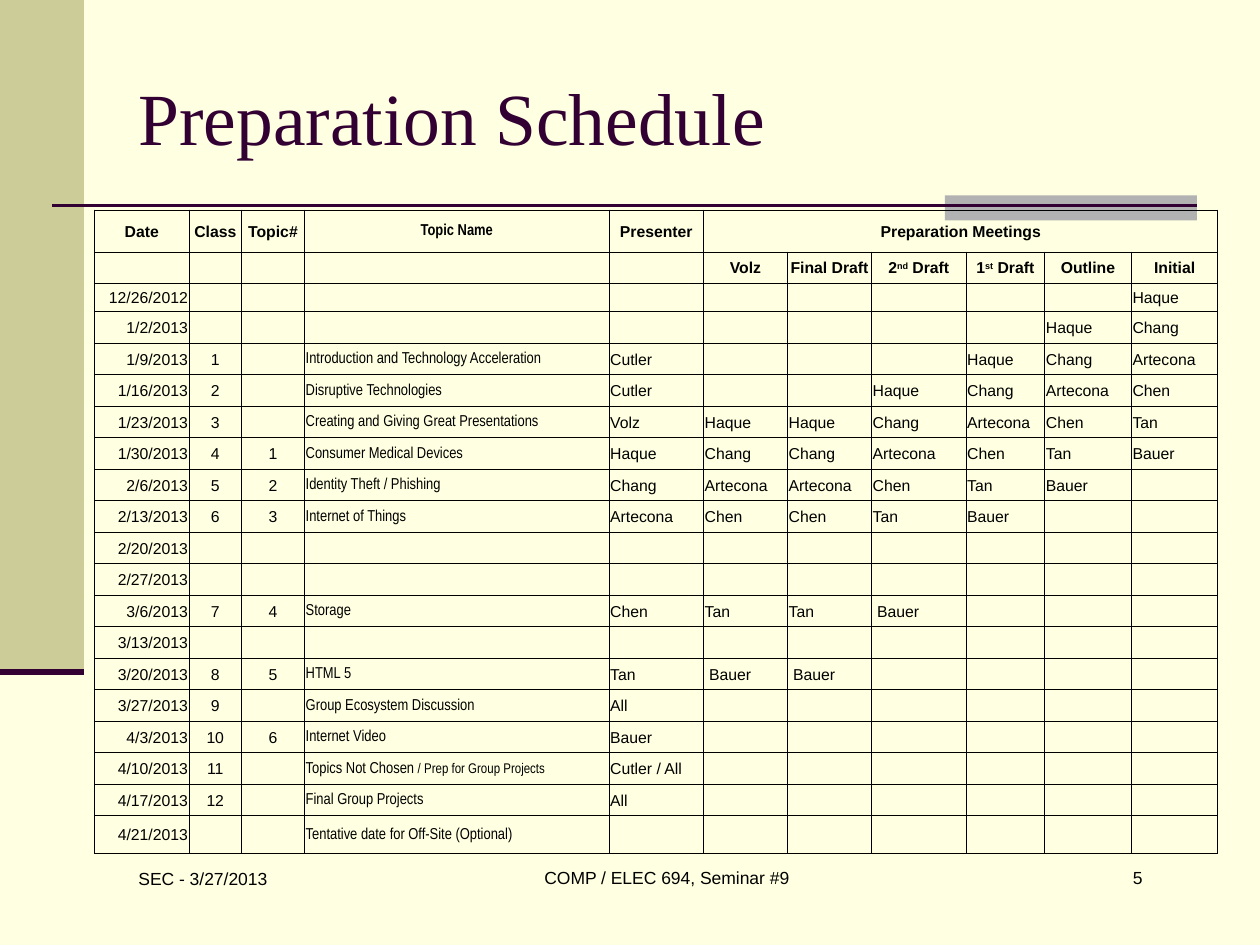
import dataclasses

import pptx
import pptx.dml.color
import pptx.enum.shapes
import pptx.enum.text
import pptx.oxml
import pptx.oxml.ns
import pptx.util

ALIGN = pptx.enum.text.PP_ALIGN
MID = pptx.enum.text.MSO_ANCHOR.MIDDLE
UNIT = 1 / 12  # the slide is a grid of 120 columns by 90 rows


@dataclasses.dataclass(frozen=True)
class Theme:
    page: str = "FFFFE1"
    band: str = "CCCC99"
    block: str = "B2B2B2"
    plum: str = "330033"
    ink: str = "000000"
    serif: str = "Times New Roman"
    sans: str = "Arial"
    slim: str = "Arial Narrow"
    head: float = 42
    foot: float = 10
    body: float = 9
    small: float = 8


T = Theme()

COLS = [9, 5, 6, 29, 9, 8, 8, 9, 7.5, 8.25, 8.25]
ROWS = [4, 3, 2.7] + [3] * 16 + [3.6]
TOPIC = 3   # column set in the narrow face
MEET = 5    # first column of the meetings
SIDES = [ALIGN.RIGHT, ALIGN.CENTER, ALIGN.CENTER] + [ALIGN.LEFT] * 8

# Cells are split by "|"; ^ marks raised text and ~ marks smaller text
HEADS = [
    "Date|Class|Topic#|Topic Name|Presenter|Preparation Meetings",
    "|||||Volz|Final Draft|2^nd^ Draft|1^st^ Draft|Outline|Initial",
]
DATES = [
    "12/26/2012||||||||||Haque",
    "1/2/2013|||||||||Haque|Chang",
    "1/9/2013|1||Introduction and Technology Acceleration|Cutler||||Haque|Chang|Artecona",
    "1/16/2013|2||Disruptive Technologies|Cutler|||Haque|Chang|Artecona|Chen",
    "1/23/2013|3||Creating and Giving Great Presentations|Volz|Haque|Haque|Chang|Artecona|Chen|Tan",
    "1/30/2013|4|1|Consumer Medical Devices|Haque|Chang|Chang|Artecona|Chen|Tan|Bauer",
    "2/6/2013|5|2|Identity Theft / Phishing|Chang|Artecona|Artecona|Chen|Tan|Bauer",
    "2/13/2013|6|3|Internet of Things|Artecona|Chen|Chen|Tan|Bauer",
    "2/20/2013",
    "2/27/2013",
    "3/6/2013|7|4|Storage|Chen|Tan|Tan| Bauer",
    "3/13/2013",
    "3/20/2013|8|5|HTML 5|Tan| Bauer| Bauer",
    "3/27/2013|9||Group Ecosystem Discussion|All",
    "4/3/2013|10|6|Internet Video|Bauer",
    "4/10/2013|11||Topics Not Chosen ~/ Prep for Group Projects|Cutler / All",
    "4/17/2013|12||Final Group Projects|All",
    "4/21/2013|||Tentative date for Off-Site (Optional)",
]


def grid(n):
    return pptx.util.Inches(n * UNIT)


def rgb(code):
    return pptx.dml.color.RGBColor.from_string(code)


def write(para, text, face, size, color, bold=False):
    run = para.add_run()
    run.text = text
    run.font.name = face
    run.font.size = pptx.util.Pt(size)
    run.font.bold = bold
    run.font.color.rgb = rgb(color)
    return run


def block(slide, box, color):
    kind = pptx.enum.shapes.MSO_SHAPE.RECTANGLE
    shape = slide.shapes.add_shape(kind, *map(grid, box))
    shape.shadow.inherit = False
    shape.fill.solid()
    shape.fill.fore_color.rgb = rgb(color)
    shape.line.fill.background()


def rule(slide, left, right, row, width):
    kind = pptx.enum.shapes.MSO_CONNECTOR.STRAIGHT
    line = slide.shapes.add_connector(kind, grid(left), grid(row), grid(right), grid(row))
    line.line.color.rgb = rgb(T.plum)
    line.line.width = pptx.util.Pt(width)
    props = line._element.spPr
    props.append(props.makeelement(pptx.oxml.ns.qn("a:effectLst"), {}))


def frame(slide):
    """Band, block and rules behind the content."""
    block(slide, (0, 0, 8, 64), T.band)
    block(slide, (90, 18.6, 24, 2.4), T.block)
    rule(slide, 5, 114, 19.6, 1.5)
    rule(slide, 0, 8, 64, 3.5)


def title(slide, box, text):
    shape = slide.shapes.title
    shape.left, shape.top, shape.width, shape.height = map(grid, box)
    shape.text_frame.vertical_anchor = MID
    para = shape.text_frame.paragraphs[0]
    para.alignment = ALIGN.LEFT
    write(para, text, T.serif, T.head, T.plum)


def footer(slide, box, text, side):
    area = slide.shapes.add_textbox(*map(grid, box)).text_frame
    area.word_wrap = True
    para = area.paragraphs[0]
    para.alignment = side
    write(para, text, T.sans, T.foot, T.ink)


def border(cell):
    props = cell._tc.get_or_add_tcPr()
    for side in "LRTB":
        props.append(pptx.oxml.parse_xml(
            f'<a:ln{side} {pptx.oxml.ns.nsdecls("a")} w="6350"><a:solidFill>'
            f'<a:srgbClr val="{T.ink}"/></a:solidFill></a:ln{side}>'))


def entry(cell, text, side, face, bold):
    border(cell)
    cell.fill.background()
    cell.vertical_anchor = MID
    cell.margin_left = cell.margin_right = cell.margin_top = pptx.util.Inches(0.01)
    cell.margin_bottom = 0
    para = cell.text_frame.paragraphs[0]
    para.alignment = side
    if not text:  # keeps an empty row from growing
        mark = para._p.makeelement(pptx.oxml.ns.qn("a:endParaRPr"), {"sz": str(T.body * 100)})
        para._p.append(mark)
        return
    main, _, extra = text.partition("~")
    for n, part in enumerate(main.split("^")):
        run = write(para, part, face, T.body, T.ink, bold)
        if n % 2:
            run._r.get_or_add_rPr().set("baseline", "30000")
    if extra:
        write(para, extra, face, T.small, T.ink, bold)


def schedule(slide, left, top):
    """Dates by row, with the meetings under one joined heading."""
    size = (left, top, sum(COLS), sum(ROWS))
    table = slide.shapes.add_table(len(ROWS), len(COLS), *map(grid, size)).table
    table.first_row = table.horz_banding = False
    for col, width in zip(table.columns, COLS):
        col.width = grid(width)
    for row, height in zip(table.rows, ROWS):
        row.height = grid(height)
    for r, line in enumerate(HEADS + DATES):
        texts = line.split("|")
        texts += [""] * (len(COLS) - len(texts))
        head = r < len(HEADS)
        for c, text in enumerate(texts):
            side = ALIGN.CENTER if head else SIDES[c]
            face = T.slim if c == TOPIC else T.sans
            entry(table.cell(r, c), text, side, face, head)
    table.cell(0, MEET).merge(table.cell(0, len(COLS) - 1))


def main():
    deck = pptx.Presentation()
    deck.slide_width, deck.slide_height = grid(120), grid(90)
    slide = deck.slides.add_slide(deck.slide_layouts[5])
    slide.background.fill.solid()
    slide.background.fill.fore_color.rgb = rgb(T.page)
    frame(slide)
    title(slide, (12, 3.6, 102, 15), "Preparation Schedule")
    footer(slide, (12, 82.1, 26, 6), "SEC - 3/27/2013", ALIGN.LEFT)
    footer(slide, (44, 82, 39, 6), "COMP / ELEC 694, Seminar #9", ALIGN.CENTER)
    footer(slide, (89, 82, 21, 6), "5", ALIGN.RIGHT)
    schedule(slide, 9, 20)
    deck.save("out.pptx")


if __name__ == "__main__":
    main()
